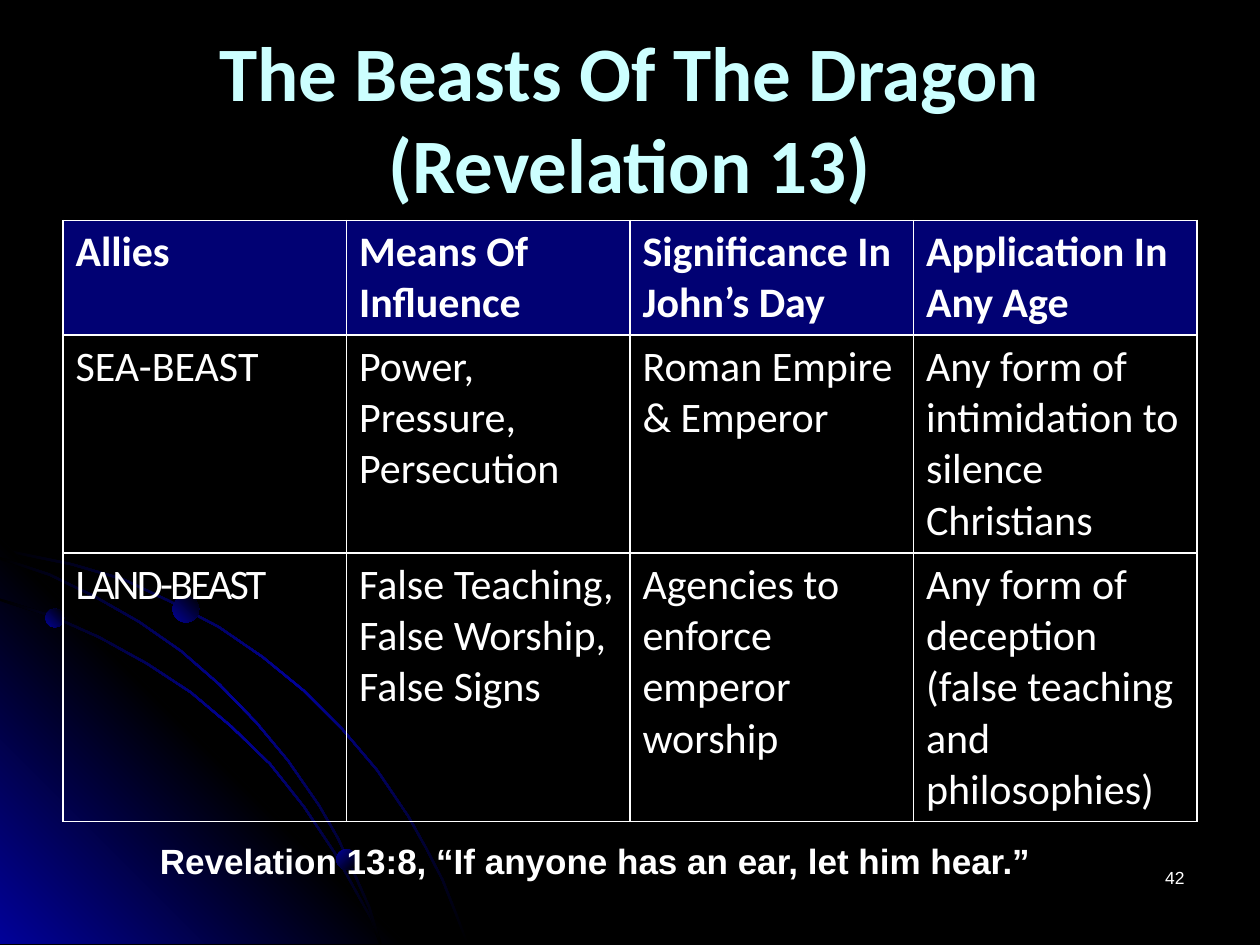
from lxml.etree import SubElement
from pptx import Presentation
from pptx.dml.color import RGBColor
from pptx.enum.shapes import MSO_SHAPE
from pptx.enum.text import MSO_ANCHOR, PP_ALIGN
from pptx.oxml import parse_xml
from pptx.oxml.ns import nsdecls, qn
from pptx.util import Inches, Pt

COLORS = {"black": "000000", "glow": "010199", "header": "010173",
          "title": "CCFFFF", "white": "FFFFFF"}
BLACK_BLUE_BLACK = ("black", "glow", "black")
BLUE_BLACK_BLUE = ("glow", "black", "glow")

# Upper edge of each comet trail, in inches from the top left of the slide
OUTER_TRAIL = [(0, 4.35), (0.28, 4.41), (0.57, 4.47), (0.98, 4.59), (1.36, 4.77),
               (1.74, 4.97), (2.09, 5.21), (2.42, 5.48), (2.72, 5.78), (3, 6.11),
               (3.25, 6.48), (3.39, 6.73), (3.52, 6.98), (3.62, 7.23), (3.72, 7.49)]
INNER_TRAIL = [(0, 4.75), (0.41, 4.88), (0.79, 5.05), (1.17, 5.26), (1.52, 5.49),
               (1.84, 5.76), (2.15, 6.06), (2.42, 6.4), (2.66, 6.76), (2.86, 7.12),
               (2.96, 7.3), (3.03, 7.49)]
MIDDLE_TRAIL = [(0, 4.42), (0.39, 4.55), (0.76, 4.73), (1.11, 4.93), (1.44, 5.16),
                (1.75, 5.43), (2.04, 5.73), (2.29, 6.03), (2.54, 6.39), (2.69, 6.65),
                (2.82, 6.93), (2.94, 7.2), (3.03, 7.49)]
TRAIL_WIDTH = 0.02
PLANETS = [(0.36, 4.83, 0.15, 315), (2.67, 6.74, 0.16, 45), (1.37, 4.73, 0.21, 315)]

ROWS = [
    ["Allies", "Means Of Influence", "Significance In John’s Day", "Application In Any Age"],
    ["SEA-BEAST", "Power, Pressure, Persecution", "Roman Empire & Emperor",
     "Any form of intimidation to silence Christians"],
    ["LAND-BEAST", "False Teaching, False Worship, False Signs",
     "Agencies to enforce emperor worship",
     "Any form of deception (false teaching and philosophies)"],
]
ROW_HEIGHTS = [0.91, 1.73, 2.13]


def rgb(name):
    return RGBColor.from_string(COLORS[name])


def paint_gradient(shape, names, angle):
    """Fill with evenly spaced colours; the angle runs clockwise in degrees."""
    shape.shadow.inherit = False
    shape.line.fill.background()
    shape.fill.gradient()
    gradient = shape.fill._fill._gradFill
    stops = gradient.find(qn("a:gsLst"))
    for stop in list(stops):
        stops.remove(stop)
    for index, name in enumerate(names):
        position = 100000 * index // (len(names) - 1)
        stop = SubElement(stops, qn("a:gs"), pos=str(position))
        SubElement(stop, qn("a:srgbClr"), val=COLORS[name])
    shape.fill.gradient_angle = (360 - angle) % 360


def add_outline(page, points, names, angle):
    start, *rest = [(Inches(x), Inches(y)) for x, y in points]
    builder = page.shapes.build_freeform(*start)
    builder.add_line_segments(rest, close=True)
    paint_gradient(builder.convert_to_shape(), names, angle)


def add_trail(page, upper):
    """Draw a thin band whose lower edge shifts from downward to leftward."""
    last = len(upper) - 1
    lower = [(x - TRAIL_WIDTH * i / last, y + TRAIL_WIDTH * (1 - i / last))
             for i, (x, y) in enumerate(upper)]
    add_outline(page, upper + lower[::-1], BLACK_BLUE_BLACK, 45)


def add_backdrop(page):
    page.background.fill.solid()
    page.background.fill.fore_color.rgb = rgb("black")
    add_trail(page, OUTER_TRAIL)
    add_outline(page, [(0, 4.27), (3.22, 7.49), (0, 7.49)], BLUE_BLACK_BLUE, 315)
    add_trail(page, INNER_TRAIL)
    add_trail(page, MIDDLE_TRAIL)
    for left, top, size, angle in PLANETS:
        planet = page.shapes.add_shape(MSO_SHAPE.OVAL, Inches(left), Inches(top),
                                       Inches(size), Inches(size))
        paint_gradient(planet, ("glow", "black"), angle)


def style_font(font, name, size, color, bold=False):
    font.name = name
    font.size = Pt(size)
    font.bold = bold
    font.color.rgb = rgb(color)


def add_text(page, box, text, name, size, color="white", bold=False,
             align=PP_ALIGN.LEFT, anchor=MSO_ANCHOR.TOP):
    frame = page.shapes.add_textbox(*map(Inches, box)).text_frame
    frame.word_wrap = True
    frame.vertical_anchor = anchor
    para = frame.paragraphs[0]
    para.text = text
    para.alignment = align
    style_font(para.font, name, size, color, bold)


def add_cell_borders(cell):
    properties = cell._tc.get_or_add_tcPr()
    for index, side in enumerate(("lnL", "lnR", "lnT", "lnB")):
        properties.insert(index, parse_xml(
            f'<a:{side} {nsdecls("a")} w="12700"><a:solidFill>'
            f'<a:srgbClr val="{COLORS["white"]}"/></a:solidFill></a:{side}>'))


def add_allies_table(page, left, top, width):
    frame = page.shapes.add_table(len(ROWS), len(ROWS[0]), Inches(left), Inches(top),
                                  Inches(width), Inches(sum(ROW_HEIGHTS)))
    table = frame.table
    table.horz_banding = False
    for column in table.columns:
        column.width = Inches(width / len(ROWS[0]))
    for row_index, texts in enumerate(ROWS):
        table.rows[row_index].height = Inches(ROW_HEIGHTS[row_index])
        is_header = row_index == 0
        for column_index, text in enumerate(texts):
            cell = table.cell(row_index, column_index)
            if is_header:
                cell.fill.solid()
                cell.fill.fore_color.rgb = rgb("header")
            else:
                cell.fill.background()
            add_cell_borders(cell)
            para = cell.text_frame.paragraphs[0]
            para.text = text
            style_font(para.font, "Calibri", 24, "white", is_header)
    land_beast = table.cell(2, 0).text_frame.paragraphs[0].runs[0]
    land_beast.font._element.set("spc", "-150")


def main():
    deck = Presentation()
    deck.slide_width, deck.slide_height = Inches(10), Inches(7.5)
    page = deck.slides.add_slide(deck.slide_layouts[6])
    add_backdrop(page)
    add_text(page, (0.5, 0.3, 9, 1.25), "The Beasts Of The Dragon (Revelation 13)",
             "Calibri", 44, "title", True, PP_ALIGN.CENTER, MSO_ANCHOR.MIDDLE)
    add_allies_table(page, 0.5, 1.75, 9)
    add_text(page, (7.17, 6.83, 2.33, 0.5), "42", "Arial", 10, align=PP_ALIGN.RIGHT)
    add_text(page, (1.17, 6.61, 7.58, 0.44),
             "Revelation 13:8, “If anyone has an ear, let him hear.”",
             "Arial", 20, bold=True)
    deck.save("out.pptx")


if __name__ == "__main__":
    main()
